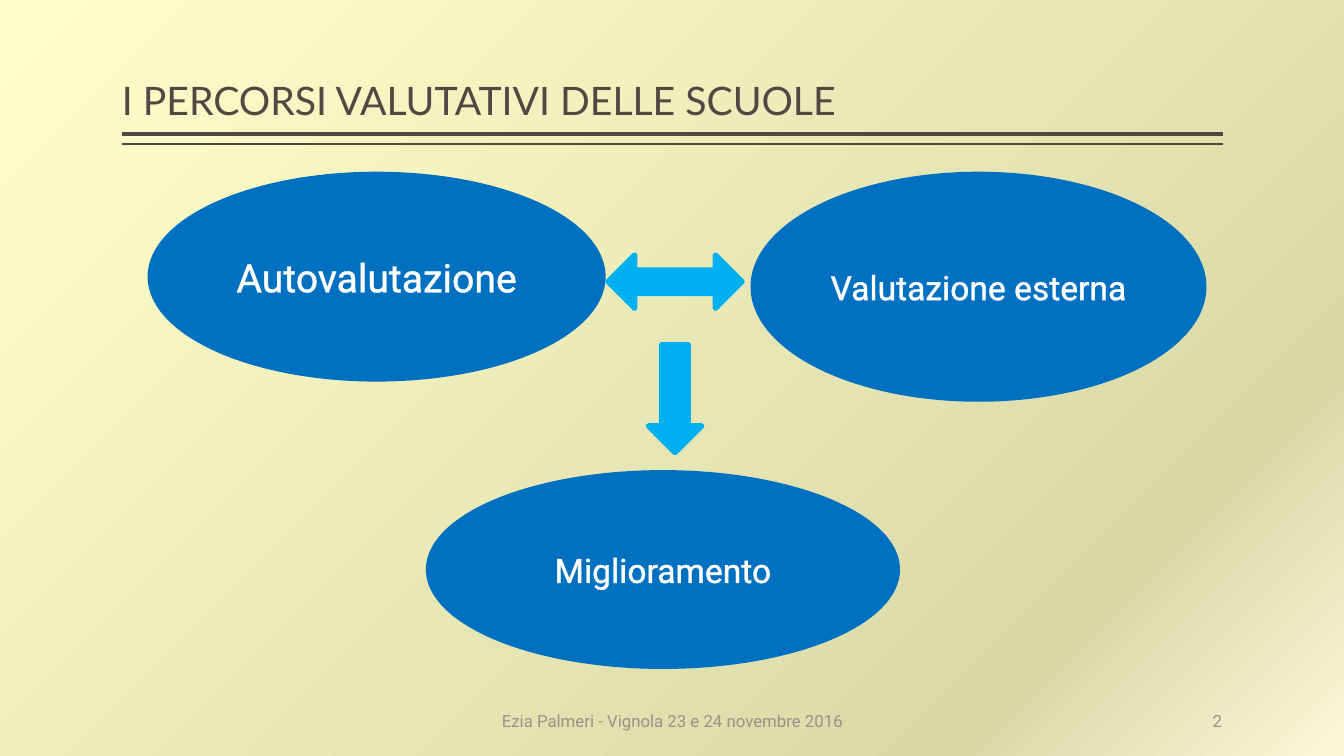
import copy
from dataclasses import dataclass

import pptx
import pptx.dml.color
import pptx.enum.shapes
import pptx.enum.text
import pptx.oxml
import pptx.oxml.ns
import pptx.util

PX = 9144
DARK, GREY, WHITE = "514843", "9D8F88", "FFFFFF"
BLUE, SKY = "0070C0", "00B0F0"
OUTLINE = 3.78
Shape = pptx.enum.shapes.MSO_SHAPE
Align = pptx.enum.text.PP_ALIGN
Anchor = pptx.enum.text.MSO_ANCHOR


@dataclass(frozen=True)
class Box:
    """Position and size in px, at 100 px to the inch."""
    left: int
    top: int
    width: int
    height: int

    def emu(self) -> list:
        """Return left, top, width and height in EMU."""
        return [px(value) for value in (self.left, self.top, self.width, self.height)]


@dataclass(frozen=True)
class Stage:
    """One ellipse of the evaluation cycle."""
    label: str
    box: Box
    size: int


@dataclass(frozen=True)
class Arrow:
    """One block arrow between stages."""
    kind: Shape
    box: Box
    rotation: int = 0
    adjustments: tuple = (0.5, 0.5)


@dataclass(frozen=True)
class Rule:
    """One horizontal line under the title."""
    top: int
    weight: int


@dataclass(frozen=True)
class Note:
    """One text of the footer."""
    text: str
    box: Box
    align: Align


STAGES = [
    Stage("Autovalutazione", Box(149, 173, 449, 203), 28),
    Stage("Valutazione esterna", Box(747, 173, 447, 223), 24),
    Stage("Miglioramento", Box(425, 469, 465, 192), 24),
]
ARROWS = [
    Arrow(Shape.UP_DOWN_ARROW, Box(643, 213, 53, 133), 90, (0.5, 0.44)),
    Arrow(Shape.DOWN_ARROW, Box(643, 342, 53, 107)),
]
RULES = [Rule(133, 3), Rule(143, 1)]
NOTES = [
    Note("Ezia Palmeri - Vignola 23 e 24 novembre 2016", Box(321, 695, 692, 40), Align.CENTER),
    Note("2", Box(1012, 695, 200, 40), Align.RIGHT),
]
GRADIENT = [(0, "FEF6DA"), (0.18, "DADAA9"), (1, "FFFFCC")]


def px(value: int) -> int:
    """Turn px into EMU."""
    return value * PX


def rgb(value: str) -> pptx.dml.color.RGBColor:
    """Turn a hex string into a colour."""
    return pptx.dml.color.RGBColor.from_string(value)


def write(shape, text: str, *, size: int, color: str, font: str = "Roboto",
          align=Align.CENTER, anchor=Anchor.MIDDLE, inset: int = 10,
          spacing: float = 1.0, stroke: float = 0) -> None:
    """Put one formatted paragraph into a shape."""
    frame = shape.text_frame
    frame.word_wrap = True
    frame.vertical_anchor = anchor
    frame.margin_left = frame.margin_right = px(inset)
    frame.margin_top = frame.margin_bottom = px(5)
    paragraph = frame.paragraphs[0]
    paragraph.alignment = align
    paragraph.line_spacing = spacing
    run = paragraph.add_run()
    run.text = text
    run.font.name = font
    run.font.size = pptx.util.Pt(size)
    run.font.color.rgb = rgb(color)
    if stroke:
        line = pptx.oxml.parse_xml(
            f'<a:ln {pptx.oxml.ns.nsdecls("a")} w="{pptx.util.Pt(stroke)}">'
            f'<a:solidFill><a:srgbClr val="{color}"/></a:solidFill></a:ln>')
        run.font._element.insert(0, line)


def paint_background(slide) -> None:
    """Fill the slide with the diagonal gradient."""
    fill = slide.background.fill
    fill.gradient()
    fill.gradient_angle = 135
    stops = slide._element.find(".//" + pptx.oxml.ns.qn("a:gsLst"))
    stops.insert(1, copy.deepcopy(stops[0]))
    for stop, (position, color) in zip(fill.gradient_stops, GRADIENT):
        stop.position = position
        stop.color.rgb = rgb(color)


def add_solid(slide, kind: Shape, box: Box, color: str):
    """Add a preset shape with fill and line of one colour."""
    shape = slide.shapes.add_shape(kind, *box.emu())
    shape.shadow.inherit = False
    shape.fill.solid()
    shape.fill.fore_color.rgb = rgb(color)
    shape.line.color.rgb = rgb(color)
    shape.line.width = pptx.util.Pt(OUTLINE)
    return shape


def add_stage(slide, stage: Stage) -> None:
    """Add a labelled ellipse."""
    shape = add_solid(slide, Shape.OVAL, stage.box, BLUE)
    write(shape, stage.label, size=stage.size, color=WHITE, stroke=1.45)


def add_arrow(slide, arrow: Arrow) -> None:
    """Add a block arrow."""
    shape = add_solid(slide, arrow.kind, arrow.box, SKY)
    shape.rotation = arrow.rotation
    for index, value in enumerate(arrow.adjustments):
        shape.adjustments[index] = value


def add_rule(slide, rule: Rule) -> None:
    """Add a line across the content width."""
    connector = slide.shapes.add_connector(
        pptx.enum.shapes.MSO_CONNECTOR.STRAIGHT,
        px(121), px(rule.top), px(1213), px(rule.top))
    connector.line.color.rgb = rgb(DARK)
    connector.line.width = pptx.util.Pt(rule.weight)
    connector._element.spPr.append(pptx.oxml.parse_xml(
        f'<a:effectLst {pptx.oxml.ns.nsdecls("a")}/>'))


def main() -> None:
    """Build and save the slide."""
    presentation = pptx.Presentation()
    presentation.slide_width, presentation.slide_height = px(1333), px(750)
    slide = presentation.slides.add_slide(presentation.slide_layouts[6])
    paint_background(slide)
    for rule in RULES:
        add_rule(slide, rule)
    title = slide.shapes.add_textbox(*Box(121, 8, 1092, 120).emu())
    write(title, "I PERCORSI VALUTATIVI DELLE SCUOLE", size=28, color=DARK, font="Lato",
          align=Align.LEFT, anchor=Anchor.BOTTOM, inset=0, spacing=0.9)
    for stage in STAGES:
        add_stage(slide, stage)
    for arrow in ARROWS:
        add_arrow(slide, arrow)
    for note in NOTES:
        shape = slide.shapes.add_textbox(*note.box.emu())
        write(shape, note.text, size=12, color=GREY, align=note.align, inset=0)
    presentation.save("out.pptx")


if __name__ == "__main__":
    main()
